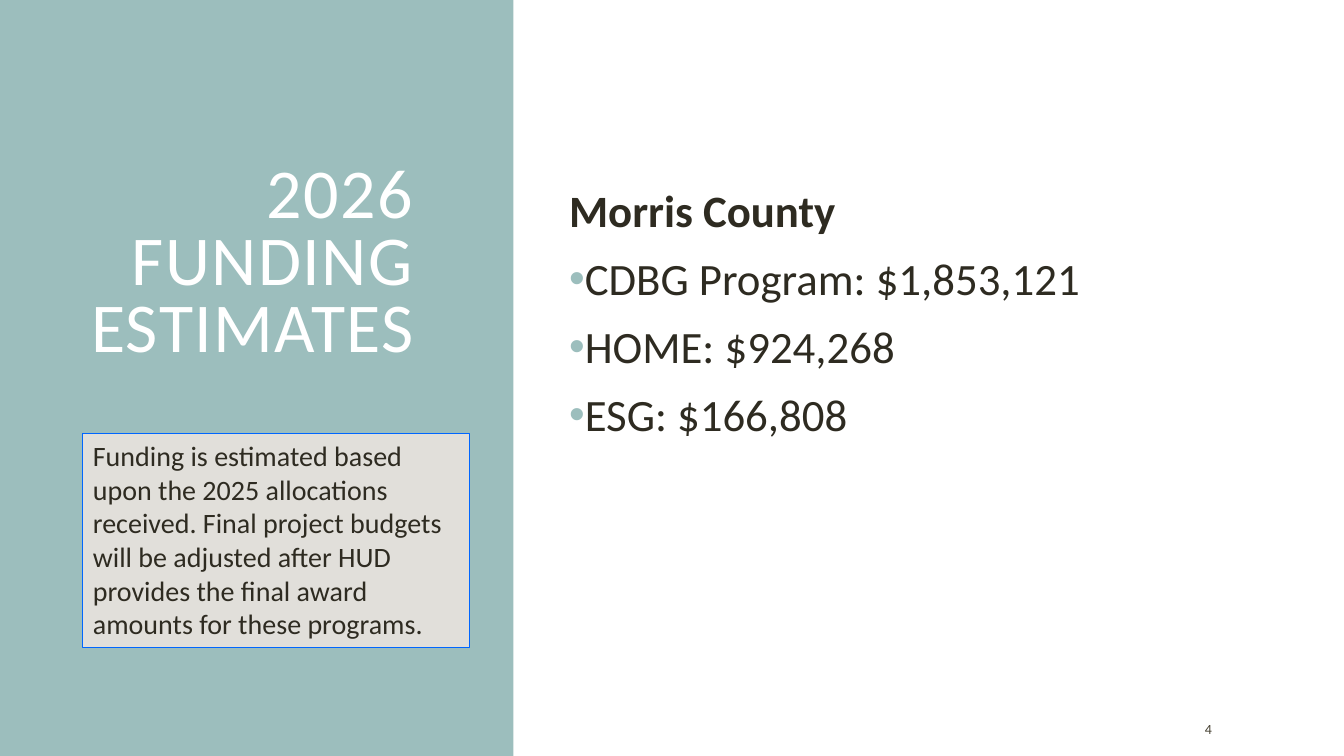
from dataclasses import dataclass

from lxml.etree import SubElement
from pptx import Presentation
from pptx.dml.color import RGBColor
from pptx.enum.shapes import MSO_SHAPE
from pptx.enum.text import MSO_ANCHOR, MSO_AUTO_SIZE, PP_ALIGN
from pptx.oxml.ns import qn
from pptx.util import Emu, Pt

EMU_PER_PX = 9525


@dataclass(frozen=True)
class Theme:
    """Hold the colours, font and type sizes of the slide."""
    font: str = "Calibri"
    teal: str = "9CBEBD"
    stone: str = "E1DFDA"
    blue: str = "0066FF"
    white: str = "FFFFFF"
    ink: str = "2E2B21"
    brown: str = "474233"
    title: int = 50
    body: int = 32
    note: int = 20
    number: int = 10


THEME = Theme()


def px(length):
    """Turn whole pixels into EMU."""
    return Emu(length * EMU_PER_PX)


def apply(target, values):
    """Set each attribute named in values."""
    for name, value in values.items():
        setattr(target, name, value)


def place(shape, left, top, width, height):
    """Move and size a shape in pixels."""
    apply(shape, {"left": px(left), "top": px(top),
                  "width": px(width), "height": px(height)})


def style(paragraph, size, color, bold=False, **layout):
    """Format a paragraph and its font."""
    apply(paragraph, layout)
    apply(paragraph.font, {"name": THEME.font, "size": Pt(size), "bold": bold})
    paragraph.font.color.rgb = RGBColor.from_string(color)


def add_panel(slide, box, fill, line=None):
    """Add a flat rectangle, outlined if a line colour is given."""
    panel = slide.shapes.add_shape(MSO_SHAPE.RECTANGLE, *map(px, box))
    panel.shadow.inherit = False
    panel.fill.solid()
    panel.fill.fore_color.rgb = RGBColor.from_string(fill)
    if line:
        panel.line.color.rgb = RGBColor.from_string(line)
        panel.line.width = Pt(0.75)
    else:
        panel.line.fill.background()
    return panel


def set_bullet(paragraph, color=None):
    """Give a paragraph a hanging coloured bullet, or none."""
    properties = paragraph._p.get_or_add_pPr()
    indent = px(10) if color else 0
    properties.set("marL", str(indent))
    properties.set("indent", str(-indent))
    if color:
        bullet_color = SubElement(properties, qn("a:buClr"))
        SubElement(bullet_color, qn("a:srgbClr")).set("val", color)
        SubElement(properties, qn("a:buChar")).set("char", "•")
    else:
        SubElement(properties, qn("a:buNone"))


def fill_title(title, text):
    """Write the letter-spaced heading."""
    place(title, 36, 84, 368, 337)
    apply(title.text_frame, {"text": text, "word_wrap": True,
                             "vertical_anchor": MSO_ANCHOR.MIDDLE,
                             "auto_size": MSO_AUTO_SIZE.NONE})
    heading = title.text_frame.paragraphs[0]
    style(heading, THEME.title, THEME.white,
          alignment=PP_ALIGN.RIGHT, line_spacing=0.8)
    heading.runs[0].font._element.set("spc", "100")


def fill_estimates(body, county, programs):
    """Write the county name and its bulleted programs."""
    place(body, 537, 134, 645, 332)
    frame = body.text_frame
    apply(frame, {"text": "\n".join([county, *programs]), "word_wrap": True,
                  "vertical_anchor": MSO_ANCHOR.MIDDLE,
                  "auto_size": MSO_AUTO_SIZE.NONE})
    apply(frame, dict.fromkeys(("margin_left", "margin_top",
                                "margin_right", "margin_bottom"), px(5)))
    for position, entry in enumerate(frame.paragraphs):
        is_county = position == 0
        set_bullet(entry, None if is_county else THEME.teal)
        style(entry, THEME.body, THEME.ink, is_county, line_spacing=0.9,
              space_before=Pt(0 if is_county else 12), space_after=Pt(2))


def add_note(slide, text):
    """Add the outlined box with the funding caveat."""
    note = add_panel(slide, (79, 413, 368, 204), THEME.stone, THEME.blue)
    apply(note.text_frame, {"text": text, "word_wrap": True,
                            "vertical_anchor": MSO_ANCHOR.TOP,
                            "auto_size": MSO_AUTO_SIZE.SHAPE_TO_FIT_TEXT})
    style(note.text_frame.paragraphs[0], THEME.note, THEME.ink,
          alignment=PP_ALIGN.LEFT)


def add_slide_number(slide, number):
    """Add the slide number at the lower right."""
    footer = slide.shapes.add_textbox(*map(px, (1138, 680, 102, 29)))
    apply(footer.text_frame, {"text": number, "word_wrap": True,
                              "vertical_anchor": MSO_ANCHOR.MIDDLE})
    style(footer.text_frame.paragraphs[0], THEME.number, THEME.brown)


def main():
    """Build and save the funding slide."""
    deck = Presentation()
    apply(deck, {"slide_width": px(1280), "slide_height": px(720)})
    slide = deck.slides.add_slide(deck.slide_layouts[1])
    title, body = slide.placeholders
    sidebar = add_panel(slide, (0, 0, 489, 720), THEME.teal)
    title._element.addprevious(sidebar._element)
    fill_title(title, "2026 FUNDING ESTIMATES")
    fill_estimates(body, "Morris County", [
        "CDBG Program: $1,853,121", "HOME: $924,268", "ESG: $166,808"])
    add_slide_number(slide, "4")
    add_note(slide, "Funding is estimated based upon the 2025 allocations "
                    "received. Final project budgets will be adjusted after "
                    "HUD provides the final award amounts for these programs.")
    deck.save("out.pptx")


if __name__ == "__main__":
    main()
